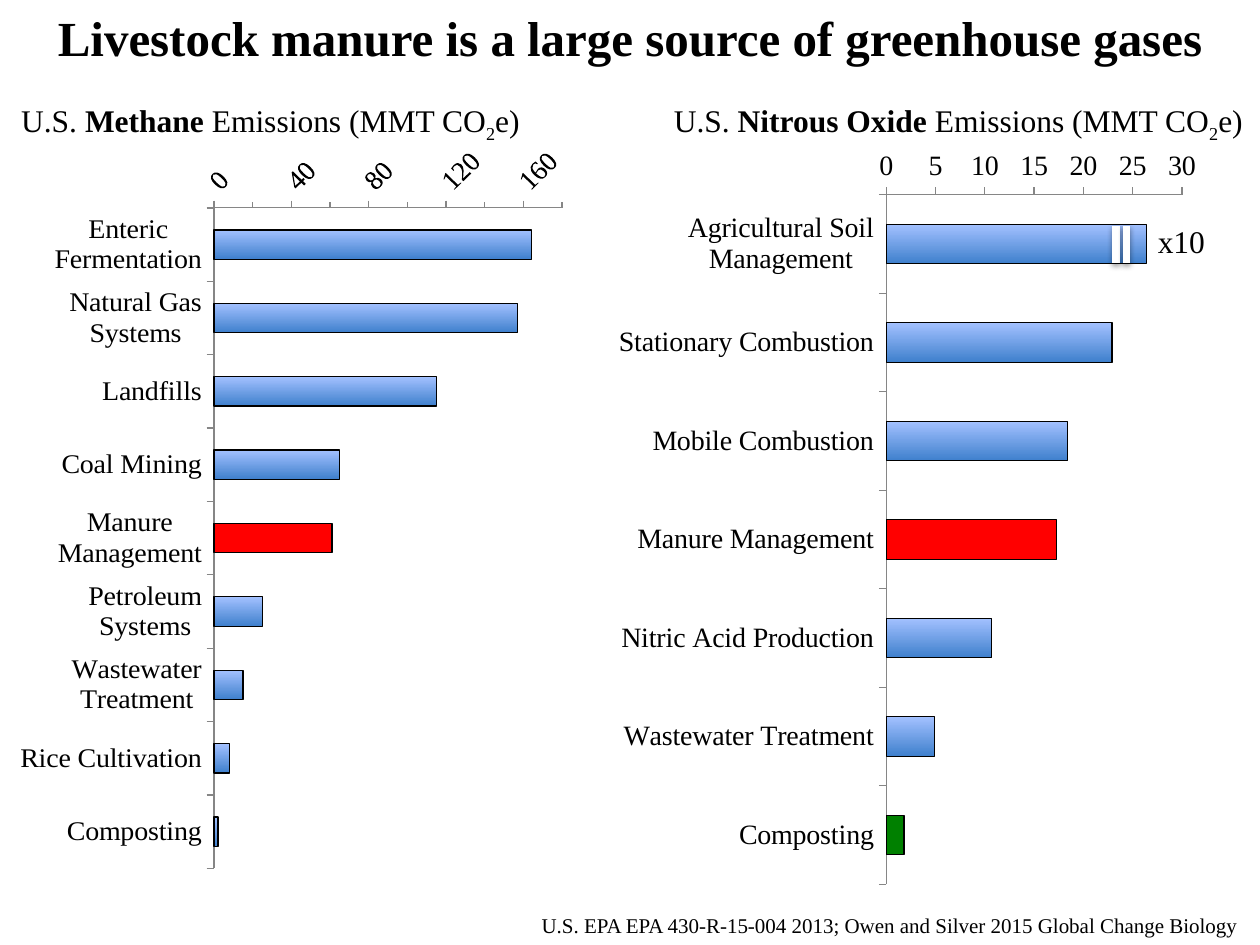
from lxml.etree import SubElement, fromstring
from pptx import Presentation
from pptx.chart.data import CategoryChartData as ChartData
from pptx.dml.color import RGBColor as Color
from pptx.enum.chart import XL_CHART_TYPE as ChartType, XL_TICK_MARK as Tick
from pptx.enum.shapes import MSO_CONNECTOR as Connector
from pptx.enum.text import MSO_ANCHOR as Anchor, PP_ALIGN as Align
from pptx.oxml.ns import nsdecls, qn
from pptx.util import Pt

THEME = dict(
    font="Times New Roman", title=28, heading=18, label=16, source=12,
    ink="000000", paper="FFFFFF", axis="868686", bar_bottom="3F80CD",
    bar_top="A3C1FF", manure="FF0000", compost="008000",
)

TITLE = "Livestock manure is a large source of greenhouse gases"
SOURCE = "U.S. EPA EPA 430-R-15-004 2013; Owen and Silver 2015 Global Change Biology"

NITROUS_OXIDE = dict(
    at=(347.8, 76.3, 344.9, 437.8), plot=(0.46, 0.08, 0.49, 0.9),
    top=30, step=5, minor=None, turn=0,
    rows=[
        ("Agricultural Soil Management", 26.4), ("Stationary Combustion", 22.9),
        ("Mobile Combustion", 18.4), ("Manure Management", 17.3),
        ("Nitric Acid Production", 10.7), ("Wastewater Treatment", 4.9),
        ("Composting", 1.8),
    ],
    accents={"Manure Management": "manure", "Composting": "compost"},
)
METHANE = dict(
    at=(7.9, 83.5, 340.6, 430.6), plot=(0.336, 0.048, 0.584, 0.909),
    top=180, step=40, minor=20, turn=-45,
    rows=[
        ("Enteric Fermentation", 164), ("Natural Gas Systems", 157),
        ("Landfills", 115), ("Coal Mining", 65), ("Manure Management", 61),
        ("Petroleum Systems", 25), ("Wastewater Treatment", 15),
        ("Rice Cultivation", 8), ("Composting", 2),
    ],
    accents={"Manure Management": "manure"},
)

TEXTS = [
    ((654.5, 123.1, 41.8, 28.8), "heading", [("x10", {})]),
    ((5, 54, 303.1, 28.8), "heading",
     [("U.S. ", {}), ("Methane", dict(bold=True)), (" Emissions (MMT CO", {}),
      ("2", dict(baseline=-25)), ("e)", {})]),
    ((378, 54, 343.4, 28.8), "heading",
     [("U.S. ", {}), ("Nitrous Oxide ", dict(bold=True)), ("Emissions (MMT CO", {}),
      ("2", dict(baseline=-25)), ("e)", {})]),
    ((302.4, 517.7, 417.6, 21.6), "source", [(SOURCE, {})]),
]
BREAK_MARKS = dict(xs=(637.9, 643.7), top=128.9, bottom=150.5)


def color(name):
    return Color.from_string(THEME[name])


def points(lengths):
    return [Pt(length) for length in lengths]


def style_font(font, size):
    font.name, font.size = THEME["font"], Pt(THEME[size])
    font.color.rgb = color("ink")


def add_text(para, text, size="heading", bold=False, baseline=0):
    span = para.add_run()
    span.text = text
    style_font(span.font, size)
    span.font.bold = bold
    if baseline:
        span.font._element.set("baseline", str(baseline * 1000))


def style_bar(bar, accent=None):
    if accent:
        bar.fill.solid()
        bar.fill.fore_color.rgb = color(accent)
    else:
        bar.fill.gradient()
        bar.fill.gradient_angle = 90
        for stop, name in zip(bar.fill.gradient_stops, ("bar_bottom", "bar_top")):
            stop.color.rgb = color(name)
    bar.line.color.rgb = color("ink")
    bar.line.width = Pt(0.75)


def place_plot(chart, plot):
    area = chart._chartSpace.chart.plotArea
    for old in area.findall(qn("c:layout")):
        area.remove(old)
    layout = fromstring(f"<c:layout {nsdecls('c')}/>")
    manual = SubElement(layout, qn("c:manualLayout"))
    settings = [("layoutTarget", "inner"), ("xMode", "edge"), ("yMode", "edge")]
    for key, value in settings + list(zip("xywh", plot)):
        SubElement(manual, qn(f"c:{key}")).set("val", str(value))
    area.insert(0, layout)


def add_bars(page, info):
    data = ChartData()
    data.categories = [name for name, _ in info["rows"]]
    data.add_series("Series 1", [value for _, value in info["rows"]])
    chart = page.shapes.add_chart(
        ChartType.BAR_CLUSTERED, *points(info["at"]), data).chart
    chart.has_legend = chart.has_title = False
    style_font(chart.font, "label")
    place_plot(chart, info["plot"])

    categories, values = chart.category_axis, chart.value_axis
    categories.reverse_order = True
    for axis in (categories, values):
        axis.has_major_gridlines = False
        axis.major_tick_mark, axis.minor_tick_mark = Tick.OUTSIDE, Tick.NONE
        axis.format.line.color.rgb = color("axis")
        axis.format.line.width = Pt(0.75)
        style_font(axis.tick_labels.font, "label")
    values.minimum_scale, values.maximum_scale = 0, info["top"]
    values.major_unit = info["step"]
    if info["minor"]:
        values.minor_unit, values.minor_tick_mark = info["minor"], Tick.OUTSIDE
    body = values._element.find(qn("c:txPr")).find(qn("a:bodyPr"))
    body.set("rot", str(info["turn"] * 60000))
    body.set("vert", "horz")

    plot = chart.plots[0]
    plot.gap_width, plot.vary_by_categories = 150, False
    series = plot.series[0]
    style_bar(series.format)
    for index, (name, _) in enumerate(info["rows"]):
        if name in info["accents"]:
            style_bar(series.points[index].format, info["accents"][name])


def add_break_mark(page, x):
    ends = points((x, BREAK_MARKS["top"], x, BREAK_MARKS["bottom"]))
    mark = page.shapes.add_connector(Connector.STRAIGHT, *ends)
    mark.line.color.rgb = color("paper")
    mark.line.width = Pt(4.5)
    effects = SubElement(mark._element.spPr, qn("a:effectLst"))
    shadow = SubElement(effects, qn("a:outerShdw"), blurRad="40000", dist="20000",
                        dir="5400000", rotWithShape="0")
    shade = SubElement(shadow, qn("a:srgbClr"), val=THEME["ink"])
    SubElement(shade, qn("a:alpha"), val="38000")


def main():
    deck = Presentation()
    deck.slide_width, deck.slide_height = Pt(720), Pt(540)
    page = deck.slides.add_slide(deck.slide_layouts[5])

    title = page.shapes.title
    title.left, title.top, title.width, title.height = points((0, 0.7, 720, 41))
    title.text_frame.vertical_anchor = Anchor.TOP
    para = title.text_frame.paragraphs[0]
    para.alignment = Align.CENTER
    add_text(para, TITLE, size="title", bold=True)

    for info in (NITROUS_OXIDE, METHANE):
        add_bars(page, info)
    for at, size, spans in TEXTS:
        box = page.shapes.add_textbox(*points(at))
        box.text_frame.word_wrap = False
        for text, style in spans:
            add_text(box.text_frame.paragraphs[0], text, size=size, **style)
    for x in BREAK_MARKS["xs"]:
        add_break_mark(page, x)
    deck.save("out.pptx")


if __name__ == "__main__":
    main()
